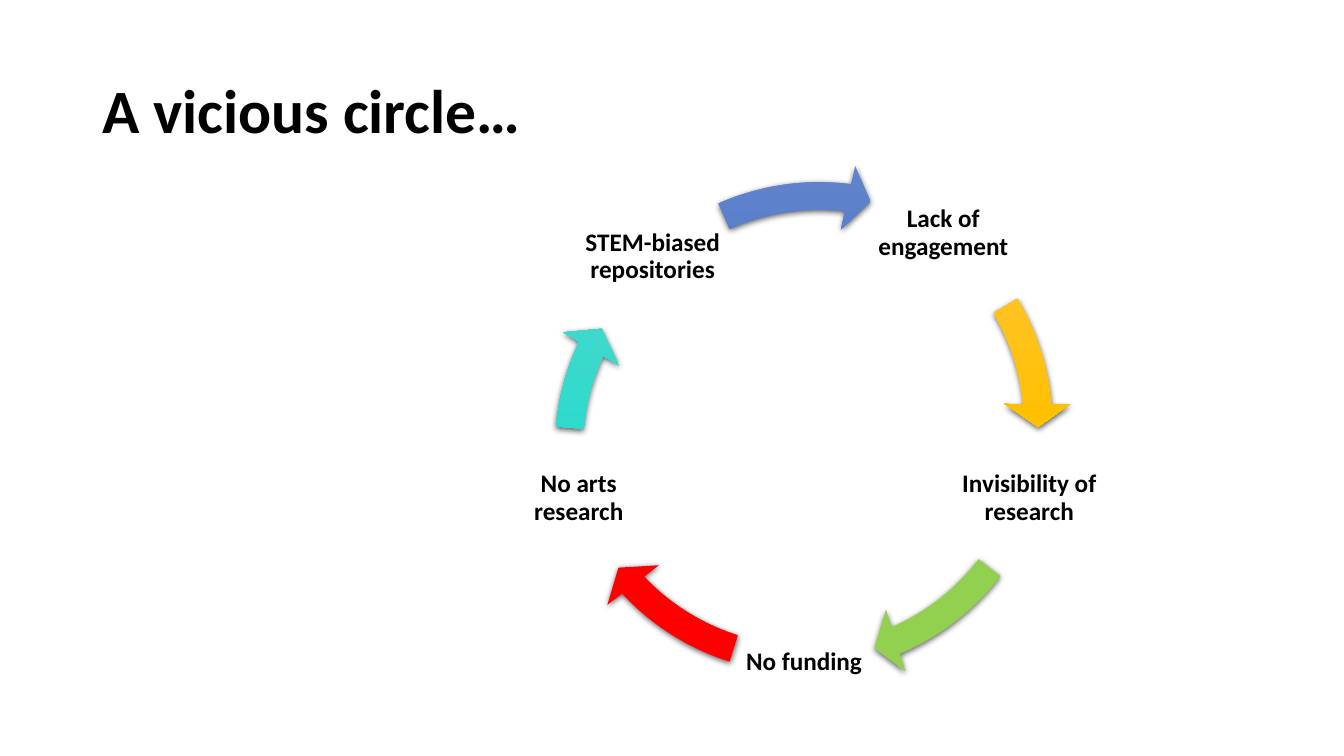
from copy import deepcopy
from dataclasses import dataclass
from math import cos, radians, sin

from lxml.etree import SubElement as Sub
from pptx import Presentation
from pptx.dml.color import RGBColor as RGB
from pptx.enum.shapes import MSO_SHAPE as Kind
from pptx.enum.text import MSO_ANCHOR as Anchor, PP_ALIGN as Align
from pptx.oxml.ns import qn
from pptx.util import Inches, Pt


@dataclass(frozen=True)
class Theme:
    """Colours and type of the slide."""
    font: str = "Calibri"
    ink: str = "000000"
    title: int = 44
    label: int = 18
    gold: tuple = ("FFC64B", "FFC000", "E3AB00")
    green: tuple = ("92D050",)
    red: tuple = ("FF0000",)
    teal: tuple = ("58D8CC", "2BDACC", "1ECBBD")
    blue: tuple = ("6183CB", "3E70CA", "3062BB")


THEME = Theme()
COLS, ROWS = 40, 22.5
MID_X, MID_Y = 23.93, 12.65
RADIUS, LABEL, ARROW = 7.05, 4.23, 15.87
STEPS = [
    ("Lack of engagement", (0, 0), THEME.gold, 329.42, 354.91, (0, 0)),
    ("Invisibility of research", (0, 0), THEME.green, 37.54, 66.93, (0, 0)),
    ("No funding", (0, 0), THEME.red, 107.47, 136.87, (0, 0)),
    ("No arts research", (0, 0), THEME.teal, 185.04, 205.09, (-0.03, 0.69)),
    ("STEM-biased repositories", (-0.36, 0.69), THEME.blue, 246.04, 277.1, (0.45, 0.15)),
]


def grid(*cells):
    """Turn grid cells into slide lengths."""
    return [Inches(cell / 3) for cell in cells]


def square(x, y, size):
    """Give the box of a square centred on a grid point."""
    return grid(x - size / 2, y - size / 2, size, size)


def add_text(slide, box, text, size, align=Align.LEFT, inset=None):
    """Add a bold, vertically centred text box."""
    frame = slide.shapes.add_textbox(*box).text_frame
    frame.word_wrap = True
    frame.vertical_anchor = Anchor.MIDDLE
    if inset is not None:
        frame.margin_left = frame.margin_right = inset
        frame.margin_top = frame.margin_bottom = inset
    frame.text = text
    para = frame.paragraphs[0]
    para.alignment = align
    para.line_spacing = 0.9
    font = para.runs[0].font
    font.name, font.size, font.bold = THEME.font, Pt(size), True
    font.color.rgb = RGB.from_string(THEME.ink)


def paint(shape, tones):
    """Fill a shape with one tone or a downward blend of three."""
    fill = shape.fill
    if len(tones) == 1:
        fill.solid()
        fill.fore_color.rgb = RGB.from_string(tones[0])
        return
    fill.gradient()
    fill.gradient_angle = 270
    stops = shape.element.spPr.find(".//" + qn("a:gsLst"))
    stops.insert(1, deepcopy(stops[0]))
    for stop, tone, place in zip(fill.gradient_stops, tones, (0, 0.5, 1)):
        stop.position = place
        stop.color.rgb = RGB.from_string(tone)


def add_shade(shape):
    """Give a shape a soft shadow below it."""
    shape.shadow.inherit = False
    effects = shape.element.spPr.find(qn("a:effectLst"))
    shade = Sub(effects, qn("a:outerShdw"), blurRad=str(Pt(4.5)),
                dist=str(Pt(1.5)), dir="5400000", algn="ctr", rotWithShape="0")
    tone = Sub(shade, qn("a:srgbClr"), val=THEME.ink)
    Sub(tone, qn("a:alpha"), val="63000")


def add_arrow(slide, box, tones, start, end):
    """Add a curved arrow between two angles in degrees."""
    shape = slide.shapes.add_shape(Kind.CIRCULAR_ARROW, *box)
    values = (0.052, 5.59 * 0.6, end * 0.6, start * 0.6, 0.061)
    for index, value in enumerate(values):
        shape.adjustments[index] = value
    paint(shape, tones)
    shape.line.fill.background()
    add_shade(shape)


def add_cycle(slide):
    """Set the labels evenly round a ring, each with its arrow."""
    for index, (text, shift, tones, start, end, nudge) in enumerate(STEPS):
        turn = radians(360 / len(STEPS) * index - 54)
        x = MID_X + RADIUS * cos(turn) + shift[0]
        y = MID_Y + RADIUS * sin(turn) + shift[1]
        add_text(slide, square(x, y, LABEL), text, THEME.label,
                 Align.CENTER, Inches(0.03))
        box = square(MID_X + nudge[0], MID_Y + nudge[1], ARROW)
        add_arrow(slide, box, tones, start, end)


def main():
    """Build and save the slide."""
    deck = Presentation()
    deck.slide_width, deck.slide_height = grid(COLS, ROWS)
    slide = deck.slides.add_slide(deck.slide_layouts[6])
    add_text(slide, grid(2.75, 1.2, 34.5, 4.35), "A vicious circle…", THEME.title)
    add_cycle(slide)
    deck.save("out.pptx")


if __name__ == "__main__":
    main()
